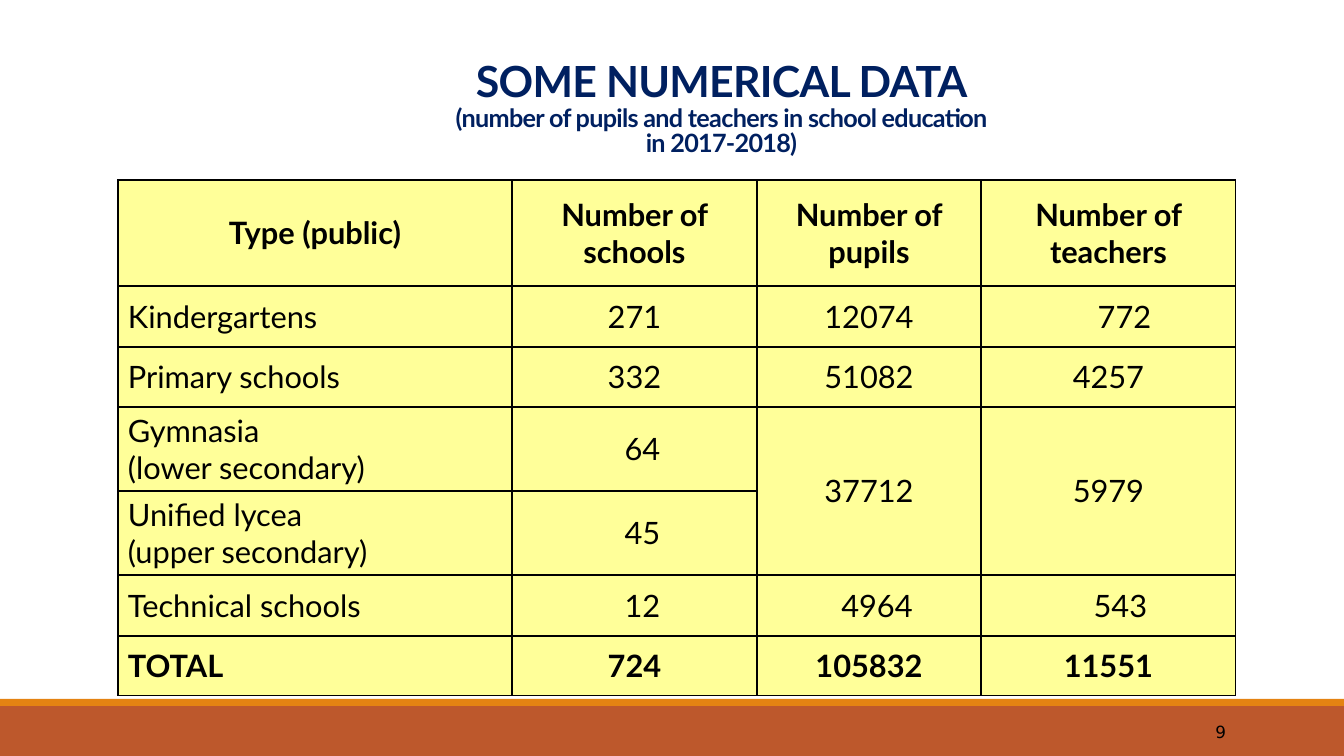
"""Build a slide with a table of school, pupil and teacher numbers."""
from lxml import etree
from pptx import Presentation
from pptx.dml.color import RGBColor
from pptx.enum.shapes import MSO_SHAPE
from pptx.enum.text import MSO_ANCHOR, PP_ALIGN
from pptx.oxml.ns import qn
from pptx.util import Pt

PX = 12192000 / 1344
NAVY = RGBColor(0x00, 0x20, 0x60)
BLACK = RGBColor(0x00, 0x00, 0x00)
YELLOW = RGBColor(0xFF, 0xFF, 0x99)
RUST = RGBColor(0xBD, 0x58, 0x2C)
ORANGE = RGBColor(0xE4, 0x83, 0x12)
RECTANGLE = MSO_SHAPE.RECTANGLE
MIDDLE, BOTTOM = MSO_ANCHOR.MIDDLE, MSO_ANCHOR.BOTTOM
LEFT, CENTER, RIGHT = PP_ALIGN.LEFT, PP_ALIGN.CENTER, PP_ALIGN.RIGHT


def px(*lengths):
    return [round(length * PX) for length in lengths]


def add_run(paragraph, text, size, color, bold=False, font="Lato"):
    run = paragraph.add_run()
    run.text = text
    run.font.name = font
    run.font.size = Pt(size)
    run.font.bold = bold
    run.font.color.rgb = color
    return run


presentation = Presentation()
presentation.slide_width, presentation.slide_height = px(1344, 756)
slide = presentation.slides.add_slide(presentation.slide_layouts[6])

for top, height, color in [(706, 50, RUST), (699, 7, ORANGE)]:
    band = slide.shapes.add_shape(RECTANGLE, *px(0, top, 1344, height))
    band.shadow.inherit = False
    band.fill.solid()
    band.fill.fore_color.rgb = color
    band.line.fill.background()

title = slide.shapes.add_textbox(*px(318, 36, 807, 127)).text_frame
title.word_wrap = True
title.vertical_anchor = BOTTOM
TITLE_LINES = [
    ("SOME NUMERICAL DATA", 30.6),
    ("(number of pupils and teachers in school education", 18),
    ("in 2017-2018)", 18),
]
for index, (text, size) in enumerate(TITLE_LINES):
    paragraph = title.add_paragraph() if index else title.paragraphs[0]
    paragraph.alignment = CENTER
    paragraph.line_spacing = 0.85
    run = add_run(paragraph, text, size, NAVY, bold=True)
    run.font._element.set("spc", "-50")

number = slide.shapes.add_textbox(*px(1092, 712, 144, 40)).text_frame
number.word_wrap = True
number.vertical_anchor = MIDDLE
number.paragraphs[0].alignment = RIGHT
add_run(number.paragraphs[0], "9", 12, BLACK, font="DejaVu Sans")

ROWS = [
    ("Type (public)", "Number of schools", "Number of pupils", "Number of teachers"),
    ("Kindergartens", "271", "12074", "772"),
    ("Primary schools", "332", "51082", "4257"),
    ("Gymnasia\n(lower secondary)", "64", "37712", "5979"),
    ("Unified lycea\n(upper secondary)", "45", "", ""),
    ("Technical schools", "12", "4964", "543"),
    ("TOTAL", "724", "105832", "11551"),
]
COLUMN_WIDTHS = [394, 245, 224, 255]
ROW_HEIGHTS = [106, 61, 60, 84, 84, 61, 60]
INDENTS = {(1, 3): 32, (3, 1): 16, (4, 1): 16, (5, 1): 16, (5, 2): 16, (5, 3): 24}

table = slide.shapes.add_table(
    len(ROWS), len(COLUMN_WIDTHS),
    *px(118, 180, sum(COLUMN_WIDTHS), sum(ROW_HEIGHTS))).table
for column, width in zip(table.columns, px(*COLUMN_WIDTHS)):
    column.width = width
for row, height in zip(table.rows, px(*ROW_HEIGHTS)):
    row.height = height
for column_index in (2, 3):
    table.cell(3, column_index).merge(table.cell(4, column_index))

for row_index, texts in enumerate(ROWS):
    is_bold = row_index in (0, len(ROWS) - 1)
    for column_index, text in enumerate(texts):
        cell = table.cell(row_index, column_index)
        cell.vertical_anchor = MIDDLE
        indent = INDENTS.get((row_index, column_index), 0)
        cell.margin_left, cell.margin_right = px(10 + indent, 10)
        cell.margin_top, cell.margin_bottom = px(5, 5)
        for line_index, line in enumerate(text.split("\n") if text else []):
            frame = cell.text_frame
            paragraph = frame.add_paragraph() if line_index else frame.paragraphs[0]
            paragraph.alignment = CENTER if row_index == 0 or column_index else LEFT
            add_run(paragraph, line, 22, BLACK, bold=is_bold)
        properties = cell._tc.get_or_add_tcPr()
        for side in ("a:lnL", "a:lnR", "a:lnT", "a:lnB"):
            border = etree.SubElement(properties, qn(side), w=str(Pt(1)))
            border_fill = etree.SubElement(border, qn("a:solidFill"))
            etree.SubElement(border_fill, qn("a:srgbClr"), val=str(BLACK))
        cell.fill.solid()
        cell.fill.fore_color.rgb = YELLOW

presentation.save("out.pptx")
